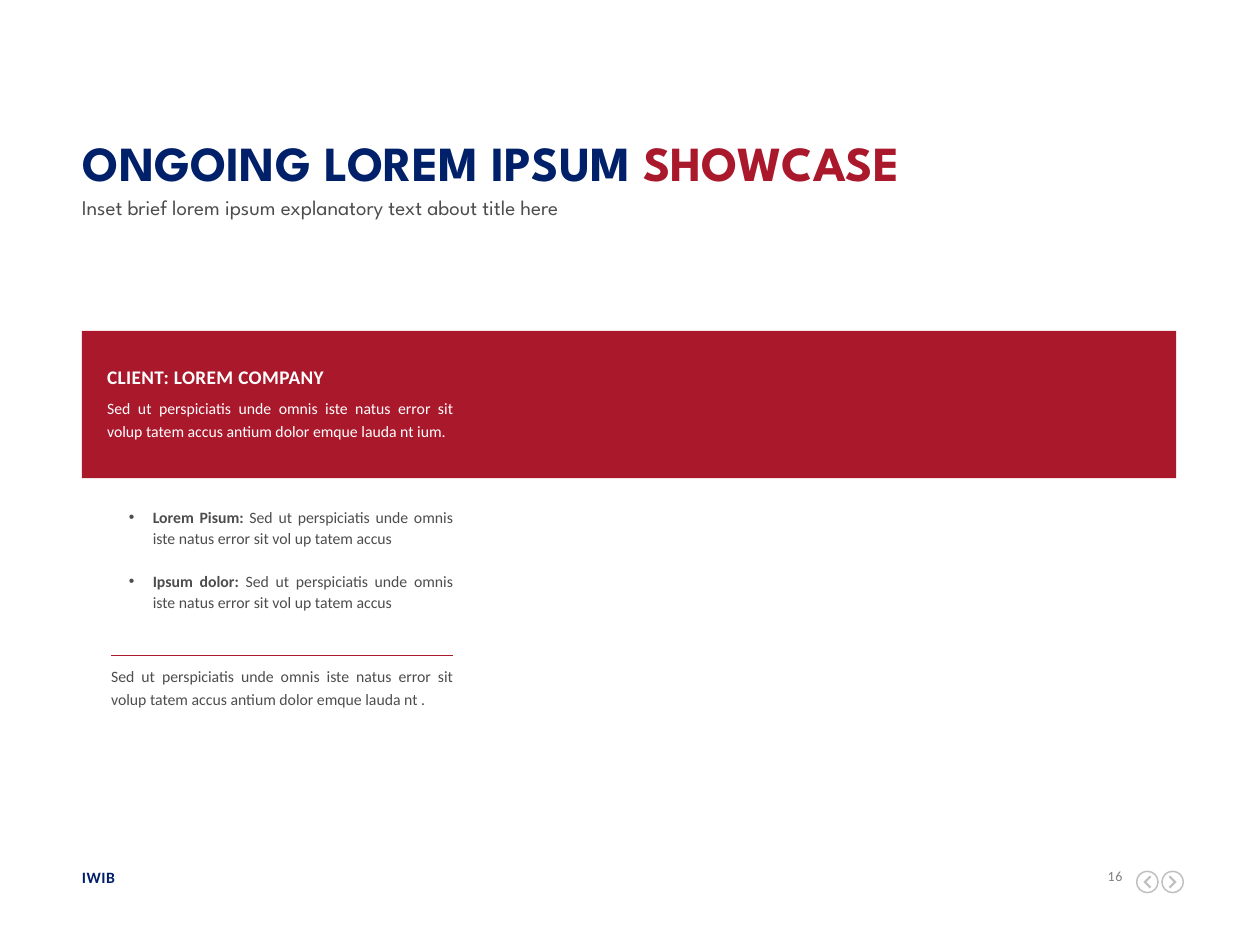
from dataclasses import dataclass
from typing import Optional

from pptx import Presentation
from pptx.dml.color import RGBColor
from pptx.enum.shapes import MSO_CONNECTOR, MSO_SHAPE
from pptx.enum.text import MSO_ANCHOR, MSO_AUTO_SIZE, PP_ALIGN
from pptx.oxml.ns import qn
from pptx.util import Cm, Pt

NAVY = RGBColor(0x00, 0x20, 0x69)
RED = RGBColor(0xAA, 0x18, 0x2C)
WHITE = RGBColor(0xFF, 0xFF, 0xFF)
DARK_GRAY = RGBColor(0x4D, 0x4D, 0x4D)
MID_GRAY = RGBColor(0x80, 0x80, 0x80)
LIGHT_GRAY = RGBColor(0xBF, 0xBF, 0xBF)

BODY_FONT = "Calibri"
TITLE_FONT = "League Spartan"
MARGIN = 1.65


@dataclass(frozen=True)
class Label:
    text: str
    left: float
    top: float
    width: float
    height: float
    size: float
    color: RGBColor
    bold: bool = False
    font: str = BODY_FONT
    align: PP_ALIGN = PP_ALIGN.LEFT
    line_points: Optional[float] = None
    spacing: int = 0  # hundredths of a point


LABELS = [
    Label("IWIB", MARGIN, 17.5, 4.95, 0.38, 9, NAVY, bold=True, spacing=30),
    Label("16", 22.05, 17.49, 0.58, 0.33, 8, MID_GRAY, align=PP_ALIGN.RIGHT, spacing=30),
    Label("Sed ut perspiciatis unde omnis iste natus error sit volup tatem accus "
          "antium dolor emque lauda nt ium.", 2.16, 7.96, 6.97, 0.89, 9, WHITE,
          align=PP_ALIGN.JUSTIFY, line_points=13),
    Label("CLIENT: LOREM COMPANY", 2.16, 7.24, 6.97, 0.56, 11, WHITE, bold=True,
          line_points=17, spacing=20),
    Label("Sed ut perspiciatis unde omnis iste natus error sit volup tatem accus "
          "antium dolor emque lauda nt .", 2.24, 13.36, 6.89, 0.89, 9, DARK_GRAY,
          align=PP_ALIGN.JUSTIFY, line_points=13),
    Label("Inset brief lorem ipsum explanatory text about title here",
          MARGIN, 4.01, 22.1, 0.38, 12, DARK_GRAY, font=TITLE_FONT, line_points=12),
]

BULLETS = [
    ("Lorem Pisum:", " Sed ut perspiciatis unde omnis iste natus error sit vol up tatem accus"),
    ("Ipsum dolor: ", "Sed ut perspiciatis unde omnis iste natus error sit vol up tatem accus"),
]

ARROW_Y = 17.78
NEXT_X, PREVIOUS_X = 23.64, 23.13
CHEVRON = [(-0.08, -0.1), (0.02, 0), (-0.08, 0.1), (-0.05, 0.13), (0.08, 0), (-0.05, -0.13)]
CIRCLE_HANDLE = 0.5523  # Bezier handle length of a quarter circle of radius 1


def place(shape, left: float, top: float, width: float, height: float) -> None:
    shape.left, shape.top = Cm(left), Cm(top)
    shape.width, shape.height = Cm(width), Cm(height)


def prepare_frame(shape):
    """Return the text frame, top-anchored, wrapping and without insets."""
    frame = shape.text_frame
    frame.auto_size = MSO_AUTO_SIZE.NONE
    frame.word_wrap = True
    frame.vertical_anchor = MSO_ANCHOR.TOP
    frame.margin_left = frame.margin_right = frame.margin_top = frame.margin_bottom = 0
    return frame


def add_run(paragraph, text: str, size: float, color: RGBColor, bold: bool = False,
            font: str = BODY_FONT, spacing: int = 0) -> None:
    run = paragraph.add_run()
    run.text = text
    run.font.name = font
    run.font.size = Pt(size)
    run.font.bold = bold
    run.font.color.rgb = color
    if spacing:
        run.font._element.set("spc", str(spacing))


def add_label(slide, label: Label) -> None:
    box = slide.shapes.add_textbox(Cm(label.left), Cm(label.top),
                                   Cm(label.width), Cm(label.height))
    paragraph = prepare_frame(box).paragraphs[0]
    paragraph.alignment = label.align
    if label.line_points:
        paragraph.line_spacing = Pt(label.line_points)
    add_run(paragraph, label.text, label.size, label.color, label.bold,
            label.font, label.spacing)


def fill_title(title) -> None:
    place(title, 1.42, 2.67, 22.3, 1.07)
    frame = prepare_frame(title)
    frame.margin_left = frame.margin_right = Cm(0.25)
    frame.margin_top = frame.margin_bottom = Cm(0.13)
    paragraph = frame.paragraphs[0]
    paragraph.alignment = PP_ALIGN.LEFT
    paragraph.line_spacing = 0.9
    paragraph.space_before = Pt(0)
    add_run(paragraph, "ONGOING LOREM IPSUM ", 28, NAVY, True, TITLE_FONT)
    add_run(paragraph, "SHOWCASE", 28, RED, True, TITLE_FONT)


def fill_bullets(body) -> None:
    place(body, 2.6, 10.19, 6.53, 2.14)
    frame = prepare_frame(body)
    for index, (lead, detail) in enumerate(BULLETS):
        paragraph = frame.add_paragraph() if index else frame.paragraphs[0]
        properties = paragraph._p.get_or_add_pPr()
        properties.set("marL", str(Cm(0.48)))
        properties.set("indent", str(-Cm(0.48)))
        properties.append(properties.makeelement(qn("a:buChar"), {"char": "•"}))
        paragraph.alignment = PP_ALIGN.JUSTIFY
        paragraph.line_spacing = Pt(12)
        paragraph.space_before = Pt(0)
        paragraph.space_after = Pt(12.6)
        add_run(paragraph, lead, 9, DARK_GRAY, True)
        add_run(paragraph, detail, 9, DARK_GRAY)


def add_banner(slide) -> None:
    banner = slide.shapes.add_shape(MSO_SHAPE.RECTANGLE, Cm(MARGIN), Cm(6.67),
                                    Cm(22.06), Cm(2.97))
    banner.shadow.inherit = False
    banner.fill.solid()
    banner.fill.fore_color.rgb = RED
    banner.line.fill.background()


def add_divider(slide) -> None:
    divider = slide.shapes.add_connector(MSO_CONNECTOR.STRAIGHT, Cm(2.24), Cm(13.21),
                                         Cm(9.13), Cm(13.21))
    divider.line.color.rgb = RED
    divider.line.width = Pt(0.75)
    properties = divider._element.spPr
    properties.append(properties.makeelement(qn("a:effectLst"), {}))


def circle(radius: float, turn: int) -> list[tuple[float, float]]:
    """Return a start point and three Bezier points for each quarter."""
    points = [(radius, 0.0)]
    x, y = radius, 0.0
    for _ in range(4):
        next_x, next_y = -turn * y, turn * x
        points += [(x + CIRCLE_HANDLE * next_x, y + CIRCLE_HANDLE * next_y),
                   (next_x + CIRCLE_HANDLE * x, next_y + CIRCLE_HANDLE * y),
                   (next_x, next_y)]
        x, y = next_x, next_y
    return points


def curve_segments(shape, count: int) -> None:
    """Turn the first count line segments into Bezier curves, three to a curve."""
    lines = list(shape._element.iter(qn("a:lnTo")))[:count]
    for start in range(0, count, 3):
        group = lines[start:start + 3]
        curve = group[0].makeelement(qn("a:cubicBezTo"), {})
        group[0].addprevious(curve)
        for line in group:
            curve.append(line[0])
            line.getparent().remove(line)


def add_arrow_button(slide, center_x: float, direction: int) -> None:
    """Draw a ringed chevron; direction is 1 for right and -1 for left."""
    contours = [
        [(Cm(center_x + direction * x), Cm(ARROW_Y + y)) for x, y in contour]
        for contour in (circle(0.23, 1), circle(0.2, -1), CHEVRON[::-1])
    ]
    builder = slide.shapes.build_freeform(*contours[0][0])
    builder.add_line_segments(contours[0][1:], close=False)
    for contour in contours[1:]:
        builder.move_to(*contour[0])
        builder.add_line_segments(contour[1:], close=contour is contours[-1])
    button = builder.convert_to_shape()
    curve_segments(button, 24)
    button.shadow.inherit = False
    button.fill.solid()
    button.fill.fore_color.rgb = LIGHT_GRAY
    button.line.fill.background()


def main() -> None:
    presentation = Presentation()
    presentation.slide_width, presentation.slide_height = Cm(25.4), Cm(19.05)
    slide = presentation.slides.add_slide(presentation.slide_layouts[1])
    add_banner(slide)
    fill_title(slide.shapes.title)
    fill_bullets(slide.placeholders[1])
    for label in LABELS:
        add_label(slide, label)
    add_divider(slide)
    add_arrow_button(slide, PREVIOUS_X, -1)
    add_arrow_button(slide, NEXT_X, 1)
    presentation.save("out.pptx")


if __name__ == "__main__":
    main()
